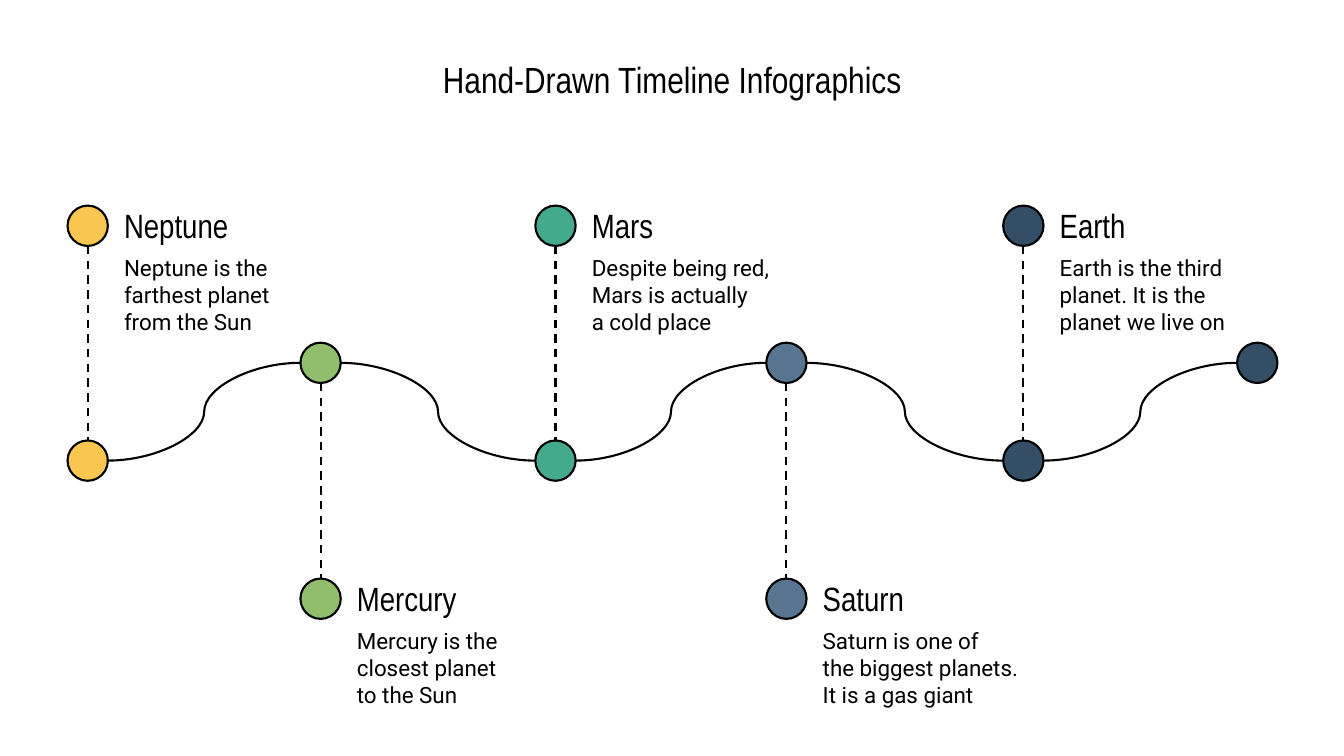
from copy import deepcopy
from itertools import pairwise

from pptx import Presentation
from pptx.dml.color import RGBColor
from pptx.enum.dml import MSO_LINE
from pptx.enum.shapes import MSO_CONNECTOR, MSO_SHAPE
from pptx.enum.text import MSO_ANCHOR, PP_ALIGN
from pptx.oxml.ns import qn
from pptx.util import Inches, Pt
from lxml import etree

OVAL = MSO_SHAPE.OVAL
CURVE = MSO_CONNECTOR.CURVE
STRAIGHT = MSO_CONNECTOR.STRAIGHT
DASH = MSO_LINE.DASH
TOP = MSO_ANCHOR.TOP
MIDDLE = MSO_ANCHOR.MIDDLE
LEFT = PP_ALIGN.LEFT
CENTER = PP_ALIGN.CENTER

BLACK = RGBColor(0x00, 0x00, 0x00)
YELLOW = RGBColor(0xF9, 0xC7, 0x4F)
LIME = RGBColor(0x90, 0xBE, 0x6D)
GREEN = RGBColor(0x43, 0xAA, 0x8B)
BLUE = RGBColor(0x57, 0x75, 0x90)
NAVY = RGBColor(0x34, 0x4E, 0x66)

TITLE = {"name": "Arial Narrow", "size": Pt(26)}
HEADING = {"name": "Arial Narrow", "size": Pt(24)}
BODY = {"name": "Roboto", "size": Pt(16)}

RADIUS = 0.2
WAVE_HIGH, WAVE_LOW = 3.6, 4.57
LABEL_HIGH, LABEL_LOW = 2.24, 5.94
END_X = 12.47

PLANETS = [
    (0.87, YELLOW, "Neptune", "Neptune is the farthest planet\nfrom the Sun"),
    (3.18, LIME, "Mercury", "Mercury is the closest planet\nto the Sun"),
    (5.51, GREEN, "Mars", "Despite being red, Mars is actually\na cold place"),
    (7.8, BLUE, "Saturn", "Saturn is one of\nthe biggest planets. It is a gas giant"),
    (10.15, NAVY, "Earth", "Earth is the third planet. It is the planet we live on"),
]


class TimelineSlide:
    def __init__(self, slide):
        self.slide = slide
        self.line_width = Pt(1.5)
        self.inset = Inches(0.13)

    def outline(self, line):
        line.color.rgb = BLACK
        line.width = self.line_width

    def circle(self, x, y, color):
        shape = self.slide.shapes.add_shape(
            OVAL, Inches(x - RADIUS), Inches(y - RADIUS), Inches(2 * RADIUS), Inches(2 * RADIUS)
        )
        shape.shadow.inherit = False
        shape.fill.solid()
        shape.fill.fore_color.rgb = color
        self.outline(shape.line)

    def connector(self, kind, start, end, dash=None):
        connector = self.slide.shapes.add_connector(kind, *map(Inches, (*start, *end)))
        self.outline(connector.line)
        if dash:
            connector.line.dash_style = dash
        etree.SubElement(connector._element.spPr, qn("a:effectLst"))

    def text(self, content, left, top, width, height, style, align=LEFT, anchor=MIDDLE):
        box = self.slide.shapes.add_textbox(*map(Inches, (left, top, width, height)))
        frame = box.text_frame
        frame_format = {"word_wrap": True, "vertical_anchor": anchor}
        for side in ("left", "right", "top", "bottom"):
            frame_format[f"margin_{side}"] = self.inset
        for name, value in frame_format.items():
            setattr(frame, name, value)
        paragraph = frame.paragraphs[0]
        paragraph.text = content
        paragraph.alignment = align
        for run in paragraph.runs:
            for name, value in style.items():
                setattr(run.font, name, value)
            run.font.color.rgb = BLACK
        for line_break in paragraph._p.findall(qn("a:br")):
            line_break.append(deepcopy(paragraph.runs[0]._r.rPr))

    def planet(self, x, wave_y, label_y, color, name, description):
        upper, lower = sorted((wave_y, label_y))
        self.connector(STRAIGHT, (x, upper + RADIUS), (x, lower - RADIUS), DASH)
        for y in (wave_y, label_y):
            self.circle(x, y, color)
        self.text(name, x + 0.23, label_y - 0.28, 2.32, 0.55, HEADING)
        self.text(description, x + 0.23, label_y + 0.17, 2.32, 1.02, BODY)


def main():
    presentation = Presentation()
    presentation.slide_width = Inches(13.33)
    presentation.slide_height = Inches(7.5)
    timeline = TimelineSlide(presentation.slides.add_slide(presentation.slide_layouts[6]))

    timeline.text("Hand-Drawn Timeline Infographics", 0.67, 0.44, 12, 0.84, TITLE, CENTER, TOP)

    centers = [planet[0] for planet in PLANETS] + [END_X]
    stops = [(x, WAVE_HIGH if index % 2 else WAVE_LOW) for index, x in enumerate(centers)]
    for (start_x, start_y), (end_x, end_y) in pairwise(stops):
        timeline.connector(CURVE, (start_x + RADIUS, start_y), (end_x - RADIUS, end_y))

    for (x, wave_y), (_, color, name, description) in zip(stops, PLANETS):
        label_y = LABEL_LOW if wave_y == WAVE_HIGH else LABEL_HIGH
        timeline.planet(x, wave_y, label_y, color, name, description)
    timeline.circle(END_X, WAVE_HIGH, NAVY)

    presentation.save("out.pptx")


if __name__ == "__main__":
    main()
